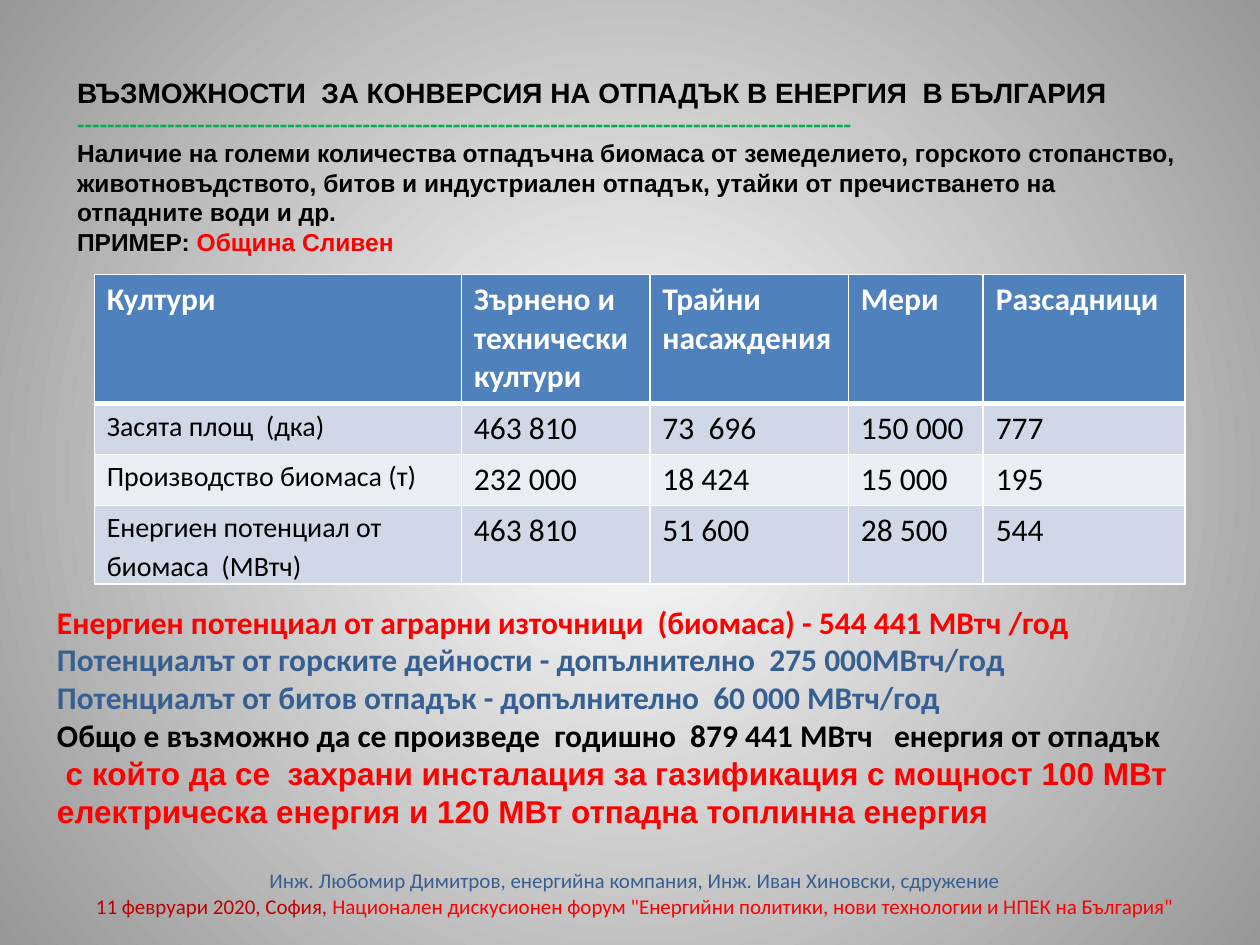
from lxml import etree
from pptx import Presentation
from pptx.dml.color import RGBColor
from pptx.enum.text import MSO_ANCHOR, MSO_AUTO_SIZE, PP_ALIGN
from pptx.oxml.ns import qn
from pptx.util import Cm, Pt

TOP = MSO_ANCHOR.TOP
NO_FIT = MSO_AUTO_SIZE.NONE
LEFT, CENTER = PP_ALIGN.LEFT, PP_ALIGN.CENTER

BLACK = RGBColor(0x00, 0x00, 0x00)
WHITE = RGBColor(0xFF, 0xFF, 0xFF)
GRAY = RGBColor(0x97, 0x97, 0x97)
RED = RGBColor(0xFF, 0x00, 0x00)
DARK_RED = RGBColor(0xC0, 0x00, 0x00)
GREEN = RGBColor(0x00, 0xB0, 0x50)
NAVY = RGBColor(0x37, 0x60, 0x92)
HEADER_BLUE = RGBColor(0x4F, 0x81, 0xBD)
BANDS = [RGBColor(0xD0, 0xD8, 0xE8), RGBColor(0xE9, 0xED, 0xF4)]


def apply(target, values):
    for name, value in values.items():
        setattr(target, name, value)


class SlideBuilder:
    """Holds the text style and the current slide."""

    def __init__(self, presentation):
        self.style = {"name": "Calibri", "size": Pt(18), "bold": True}
        self.slide = presentation.slides.add_slide(presentation.slide_layouts[5])

    def background(self, center, edge):
        fill = self.slide.background.fill
        fill.gradient()
        for stop, color in zip(fill.gradient_stops, (center, edge)):
            stop.color.rgb = color
        gradient = self.slide._element.find(".//" + qn("a:gradFill"))
        gradient.remove(gradient.find(qn("a:lin")))
        circle = etree.SubElement(gradient, qn("a:path"), path="circle")
        etree.SubElement(circle, qn("a:fillToRect"),
                         {side: "50000" for side in "ltrb"})

    def paragraph(self, paragraph, runs, **layout):
        apply(paragraph, layout)
        for text, color, changes in runs:
            run = paragraph.add_run()
            run.text = text
            apply(run.font, {**self.style, **changes})
            run.font.color.rgb = color

    def fill_text(self, shape, box, margin_top, paragraphs):
        apply(shape, dict(zip(("left", "top", "width", "height"), map(Cm, box))))
        frame = shape.text_frame
        apply(frame, {"word_wrap": True, "auto_size": NO_FIT,
                      "vertical_anchor": TOP, "margin_top": Cm(margin_top)})
        for index, (layout, runs) in enumerate(paragraphs):
            paragraph = frame.add_paragraph() if index else frame.paragraphs[0]
            self.paragraph(paragraph, runs, **layout)

    def title(self, *arguments):
        self.fill_text(self.slide.shapes.title, *arguments)

    def text_box(self, *arguments):
        shape = self.slide.shapes.add_textbox(0, 0, 0, 0)
        self.fill_text(shape, *arguments)

    def borders(self, cell, widths):
        properties = cell._tc.get_or_add_tcPr()
        for side, width in widths.items():
            line = etree.SubElement(properties, qn("a:ln" + side), w=str(Pt(width)))
            solid = etree.SubElement(line, qn("a:solidFill"))
            etree.SubElement(solid, qn("a:srgbClr"), val=str(WHITE))

    def table(self, left, top, widths, heights, rows):
        table = self.slide.shapes.add_table(
            len(rows), len(widths), Cm(left), Cm(top),
            Cm(sum(widths)), Cm(sum(heights))).table
        for column, width in zip(table.columns, widths):
            column.width = Cm(width)
        for row, height in zip(table.rows, heights):
            row.height = Cm(height)
        for r, values in enumerate(rows):
            for c, value in enumerate(values):
                cell = table.cell(r, c)
                self.borders(cell, {"L": 1, "R": 1, "T": 3 if r == 1 else 1,
                                    "B": 1 if r else 3})
                cell.fill.solid()
                cell.fill.fore_color.rgb = BANDS[(r - 1) % 2] if r else HEADER_BLUE
                label = r > 0 and c == 0
                layout = {}
                if label and r > 1:
                    apply(cell, {"margin_top": 0, "margin_bottom": 0})
                    layout["line_spacing"] = 1.15
                font = {"bold": r == 0, "size": Pt(16 if label else 18)}
                self.paragraph(cell.text_frame.paragraphs[0],
                               [(value, BLACK if r else WHITE, font)], **layout)


def main():
    presentation = Presentation()
    apply(presentation, {"slide_width": Cm(25.4), "slide_height": Cm(19.05)})
    builder = SlideBuilder(presentation)
    builder.background(WHITE, GRAY)

    # Title with introduction
    heading = {"name": "Arial", "size": Pt(16)}
    intro = {"name": "Arial", "size": Pt(14)}
    left = {"alignment": LEFT}
    builder.title((1.3, 1.3, 22.8, 6.32), 0.22, [
        (left, [("ВЪЗМОЖНОСТИ  ЗА КОНВЕРСИЯ НА ОТПАДЪК В ЕНЕРГИЯ  В БЪЛГАРИЯ",
                 BLACK, heading)]),
        (left, [("-" * 103, GREEN, {"size": Pt(14)})]),
        (left, [("Наличие на големи количества отпадъчна биомаса от земеделието, "
                 "горското стопанство, животновъдството, битов и индустриален "
                 "отпадък, утайки от пречистването на отпадните води и др.",
                 BLACK, intro)]),
        (left, [("ПРИМЕР: ", BLACK, intro), ("Община Сливен", RED, intro)]),
    ])

    # Crops and biomass
    builder.table(1.9, 5.53, [7.4, 3.8, 4, 2.72, 4.07], [2.6, 1.02, 1.02, 1.55], [
        ["Култури", "Зърнено и технически култури", "Трайни насаждения",
         "Мери", "Разсадници"],
        ["Засята площ  (дка)", "463 810", "73  696", "150 000", "777"],
        ["Производство биомаса (т)", "232 000", "18 424", "15 000", "195"],
        ["Енергиен потенциал от биомаса  (МВтч)", "463 810", "51 600",
         "28 500", "544"],
    ])

    # Energy potential and footer
    footer = {"size": Pt(12), "bold": False}
    builder.text_box((0.9, 11.91, 23.8, 6.76), 0.24, [
        (left, [("Енергиен потенциал от аграрни източници  (биомаса) - "
                 "544 441 МВтч /год", RED, {})]),
        (left, [("Потенциалът от горските дейности - допълнително  "
                 "275 000МВтч/год", NAVY, {})]),
        (left, [("Потенциалът от битов отпадък - допълнително  "
                 "60 000 МВтч/год", NAVY, {})]),
        (left, [("Общо е възможно да се произведе  годишно  879 441 МВтч   "
                 "енергия от отпадък", BLACK, {})]),
        (left, [(" с който да се  захрани инсталация за газификация с мощност "
                 "100 МВт електрическа енергия и 120 МВт отпадна топлинна енергия",
                 RED, {"name": "Arial"})]),
        ({"alignment": CENTER, "space_before": Pt(22)},
         [("Инж. Любомир Димитров, енергийна компания, "
           "Инж. Иван Хиновски, сдружение", NAVY, footer)]),
        ({"alignment": CENTER},
         [("11 февруари 2020, София, ", DARK_RED, footer),
          ("Национален дискусионен форум \"Енергийни политики, "
           "нови технологии и НПЕК на България\"", RED, footer)]),
    ])

    presentation.save("out.pptx")


if __name__ == "__main__":
    main()
